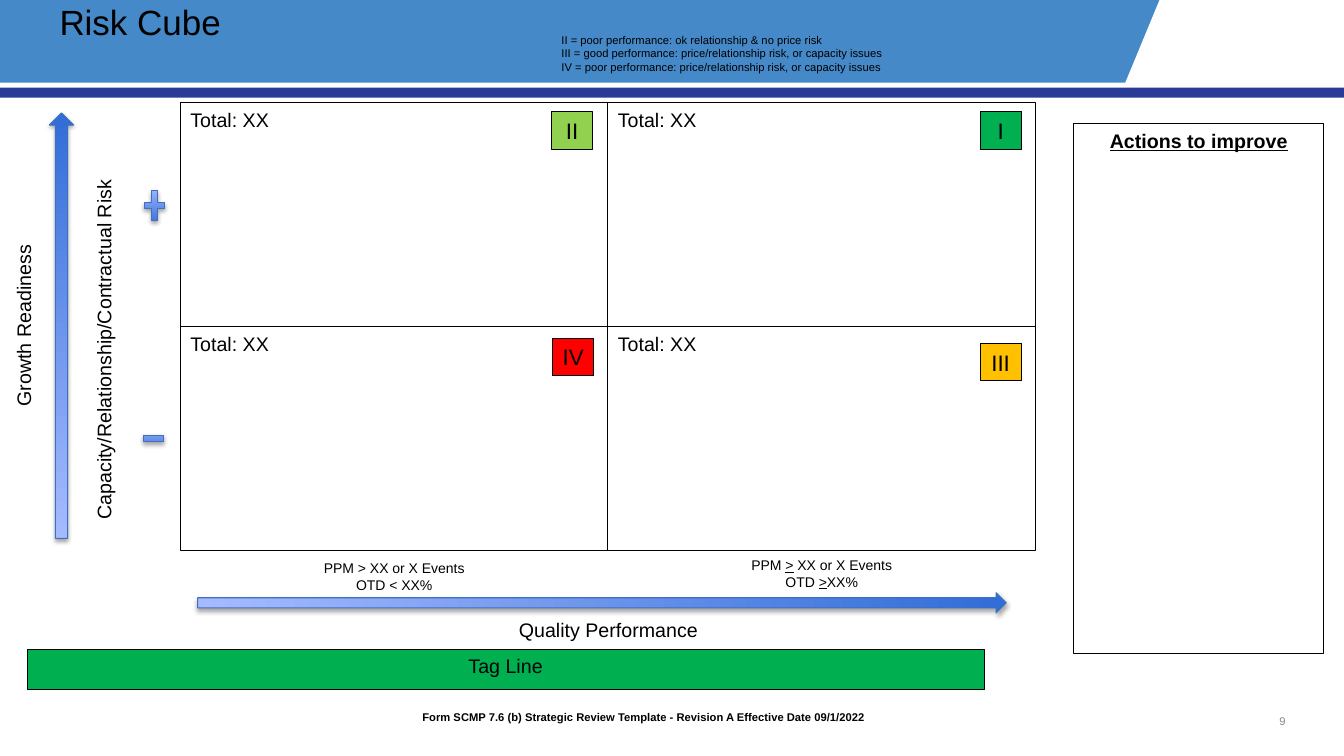
from lxml import etree
from pptx import Presentation
from pptx.dml.color import RGBColor
from pptx.enum.shapes import MSO_SHAPE
from pptx.enum.text import MSO_ANCHOR, MSO_AUTO_SIZE, PP_ALIGN
from pptx.oxml.ns import qn
from pptx.util import Inches, Pt

RECT, DOWN_ARROW = MSO_SHAPE.RECTANGLE, MSO_SHAPE.DOWN_ARROW
PLUS, MINUS = MSO_SHAPE.MATH_PLUS, MSO_SHAPE.MATH_MINUS
LEFT, CENTER, RIGHT = PP_ALIGN.LEFT, PP_ALIGN.CENTER, PP_ALIGN.RIGHT
TOP, MIDDLE = MSO_ANCHOR.TOP, MSO_ANCHOR.MIDDLE
NO_AUTOFIT = MSO_AUTO_SIZE.NONE

BLACK = RGBColor(0x00, 0x00, 0x00)
WHITE = RGBColor(0xFF, 0xFF, 0xFF)
GRAY = RGBColor(0x88, 0x88, 0x88)
BANNER_BLUE = RGBColor(0x45, 0x89, 0xC8)
NAVY = RGBColor(0x2A, 0x3B, 0x97)
DEEP_BLUE = RGBColor(0x31, 0x6D, 0xD7)
PALE_BLUE = RGBColor(0xA6, 0xBB, 0xFF)
EDGE_BLUE = RGBColor(0x3F, 0x6F, 0xC3)
GREEN = RGBColor(0x00, 0xB0, 0x50)
LIME = RGBColor(0x92, 0xD0, 0x50)
AMBER = RGBColor(0xFF, 0xC0, 0x00)
RED = RGBColor(0xFF, 0x00, 0x00)


class RiskSlide:
    font = "Arial"
    line_width = Pt(0.75)

    def __init__(self, prs):
        self.s = prs.slides.add_slide(prs.slide_layouts[5])

    def set_text(self, sp, lines, size, align=CENTER, color=BLACK, bold=False, anchor=TOP, wrap=True):
        """Fill a shape with lines of text; parts between underscores are underlined."""
        tf = sp.text_frame
        tf.word_wrap = wrap
        tf.auto_size = NO_AUTOFIT
        tf.vertical_anchor = anchor
        for i, line in enumerate(lines):
            p = tf.add_paragraph() if i else tf.paragraphs[0]
            p.alignment = align
            for j, part in enumerate(line.split("_")):
                if not part:
                    continue
                r = p.add_run()
                r.text = part
                r.font.name = self.font
                r.font.size = Pt(size)
                r.font.bold = bold
                r.font.underline = j % 2 == 1
                r.font.color.rgb = color

    def title(self, text, box):
        sp = self.s.shapes.title
        sp.left, sp.top, sp.width, sp.height = map(Inches, box)
        self.set_text(sp, [text], 25, LEFT)
        sp.text_frame.paragraphs[0].line_spacing = 0.9
        self.s.shapes._spTree.append(sp._element)  # bring in front of the banner

    def shape(self, kind, box, fill=None, line=None):
        sp = self.s.shapes.add_shape(kind, *map(Inches, box))
        sp.shadow.inherit = False
        self.paint(sp, fill, line)
        return sp

    def paint(self, sp, fill, line):
        if fill is None:
            sp.fill.background()
        else:
            sp.fill.solid()
            sp.fill.fore_color.rgb = fill
        if line is None:
            sp.line.fill.background()
        else:
            sp.line.color.rgb = line
            sp.line.width = self.line_width

    def polygon(self, points, fill):
        corners = [(Inches(x), Inches(y)) for x, y in points]
        builder = self.s.shapes.build_freeform(*corners[0])
        builder.add_line_segments(corners[1:])
        sp = builder.convert_to_shape()
        sp.shadow.inherit = False
        self.paint(sp, fill, None)

    def panel(self, box, text, size=14, align=CENTER, fill=None, bold=False, wrap=True):
        sp = self.shape(RECT, box, fill, BLACK)
        self.set_text(sp, [text], size, align, bold=bold, wrap=wrap)

    def glossy(self, kind, box, rotation=0):
        """Add a blue gradient shape with a soft shadow below it."""
        sp = self.shape(kind, box, line=EDGE_BLUE)
        sp.rotation = rotation
        sp.fill.gradient()
        sp.fill.gradient_angle = 90
        for stop, color in zip(sp.fill.gradient_stops, (DEEP_BLUE, PALE_BLUE)):
            stop.color.rgb = color
        effects = sp._element.spPr.find(qn("a:effectLst"))
        shadow = etree.SubElement(effects, qn("a:outerShdw"), blurRad=str(Pt(3.1)),
                                  dist=str(Pt(1.8)), dir="5400000", rotWithShape="0")
        black = etree.SubElement(shadow, qn("a:srgbClr"), val="000000")
        etree.SubElement(black, qn("a:alpha"), val="35000")

    def label(self, box, lines, size=14, rotation=0, **style):
        sp = self.s.shapes.add_textbox(*map(Inches, box))
        sp.rotation = rotation
        self.set_text(sp, lines, size, **style)
        return sp


def main():
    prs = Presentation()
    prs.slide_width, prs.slide_height = Inches(13.33), Inches(7.5)
    slide = RiskSlide(prs)

    slide.shape(RECT, (0, 0, 13.19, 0.82), BANNER_BLUE)
    slide.polygon([(11.5, 0), (13.33, 0), (13.33, 0.87), (11.14, 0.87)], WHITE)
    slide.shape(RECT, (0, 0.87, 13.33, 0.1), NAVY)
    slide.title("Risk Cube", (0.49, 0, 9.49, 0.95))

    slide.label((9.74, 6.95, 3.11, 0.4), ["9"], 8, align=RIGHT, color=GRAY, anchor=MIDDLE)
    slide.panel((0.27, 6.44, 9.49, 0.4), "Tag Line", fill=GREEN)

    cell_w, cell_h = 4.24, 2.22
    for row in range(2):
        for col in range(2):
            cell = (1.79 + col * cell_w, 1.02 + row * cell_h, cell_w, cell_h)
            slide.panel(cell, "Total: XX", align=LEFT)

    slide.glossy(DOWN_ARROW, (0.49, 1.12, 0.24, 4.22), 180)
    slide.label((-1.57, 3.03, 3.67, 0.4), ["Growth Readiness"], rotation=270)
    slide.label((-1.48, 3.27, 5.08, 0.4), ["Capacity/Relationship/Contractual Risk"], rotation=270)
    slide.glossy(PLUS, (1.4, 1.84, 0.27, 0.4))
    slide.glossy(MINUS, (1.39, 4.21, 0.27, 0.28))

    for numeral, x, y, color in (("I", 9.72, 1.11, GREEN), ("II", 5.47, 1.11, LIME),
                                 ("III", 9.72, 3.41, AMBER), ("IV", 5.48, 3.36, RED)):
        slide.panel((x, y, 0.41, 0.37), numeral, 16, fill=color, wrap=False)

    slide.glossy(DOWN_ARROW, (5.87, 1.97, 0.2, 8.02), 270)
    slide.label((4.2, 6.08, 3.67, 0.4), ["Quality Performance"])
    slide.label((3.01, 5.5, 1.8, 0.44), ["PPM > XX or X Events", "OTD < XX%"], 10)
    slide.label((7.25, 5.47, 1.8, 0.44), ["PPM _>_ XX or X Events", "OTD _>_XX%"], 10)

    slide.panel((10.65, 1.23, 2.48, 5.25), "_Actions to improve_", bold=True)
    slide.label((5.47, 0.28, 3.59, 0.5), [
        "II = poor performance: ok relationship & no price risk",
        "III = good performance: price/relationship risk, or capacity issues",
        "IV = poor performance: price/relationship risk, or capacity issues",
    ], 8, align=LEFT)

    footer = slide.label((3.84, 7.01, 5.28, 0.38), [
        "Form SCMP 7.6 (b) Strategic Review Template - Revision A Effective Date 09/1/2022",
    ], 8, align=LEFT, bold=True)
    p = footer.text_frame.paragraphs[0]
    p.line_spacing = 0.9
    pPr = p._p.get_or_add_pPr()
    pPr.set("marL", str(Inches(0.5)))
    pPr.set("indent", str(Inches(-0.25)))

    prs.save("out.pptx")


if __name__ == "__main__":
    main()
